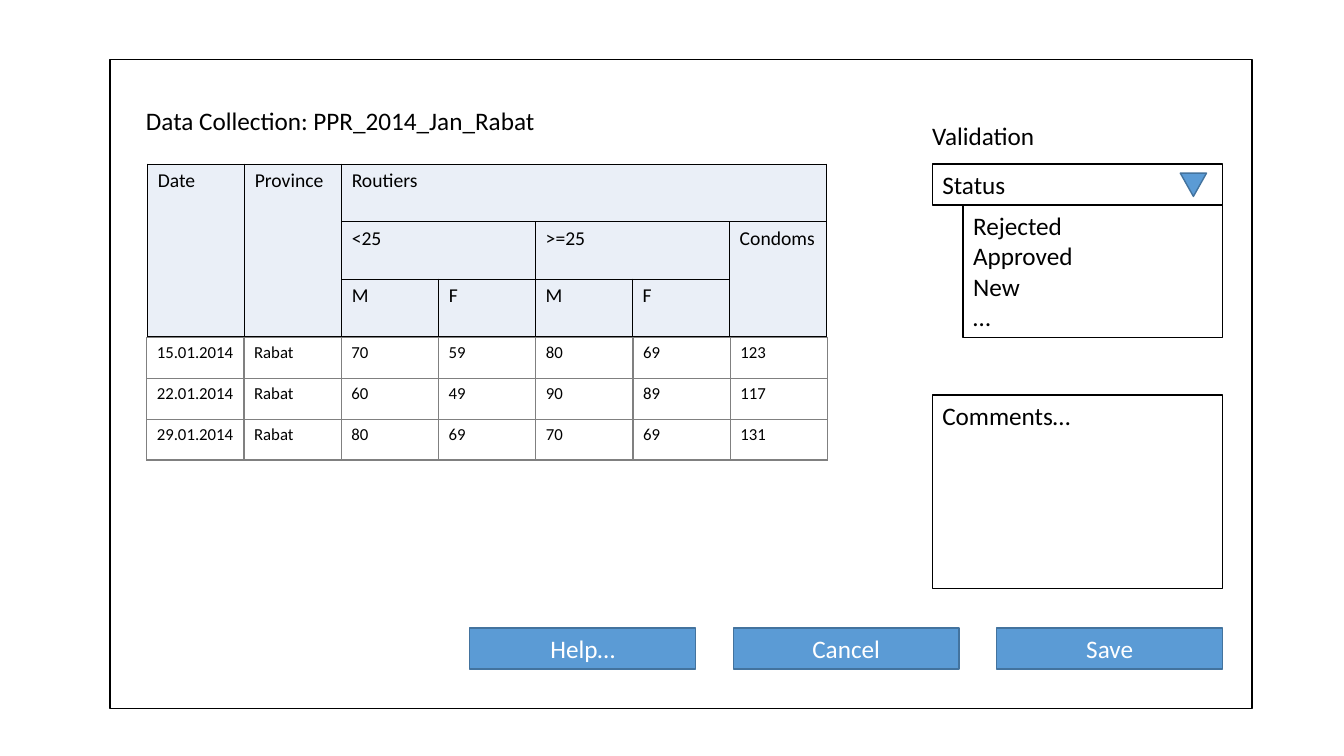
"""Build the data collection form mock-up slide."""
from lxml.etree import SubElement
from pptx import Presentation
from pptx.dml.color import RGBColor
from pptx.enum.shapes import MSO_SHAPE
from pptx.enum.text import MSO_ANCHOR, PP_ALIGN
from pptx.oxml.ns import qn
from pptx.util import Pt

BLACK = RGBColor(0x00, 0x00, 0x00)
WHITE = RGBColor(0xFF, 0xFF, 0xFF)
GREY = RGBColor(0x80, 0x80, 0x80)
BLUE = RGBColor(0x5B, 0x9B, 0xD5)
DARK_BLUE = RGBColor(0x43, 0x73, 0x9E)
PALE_BLUE = RGBColor(0xEA, 0xEF, 0xF7)

CAPTIONS = [
    ("Validation", (658.8, 82.1, 88.6, 28.8)),
    ("Data Collection: PPR_2014_Jan_Rabat", (97.2, 72, 295.2, 28.8)),
]
FIELDS = [
    (["Status"], (666, 117.2, 207.2, 29.2)),
    (["Rejected", "Approved", "New", "…"], (688, 146.8, 185.2, 94.3)),
    (["Comments…"], (666, 282.2, 207.2, 138.2)),
]
BUTTONS = ["Help…", "Cancel", "Save"]
FORM_FRAME = (78.5, 42.5, 815.8, 463.7)
STATUS_ARROW = (843.1, 123.7, 18.7, 16.6)
BUTTON_LEFT, BUTTON_TOP, BUTTON_PITCH = 335.6, 448.6, 188.2
BUTTON_SIZE = (161.3, 29.2)

HEADINGS = [
    ["Date", "Province", "Routiers", "", "", "", ""],
    ["", "", "<25", "", ">=25", "", "Condoms"],
    ["", "", "M", "F", "M", "F", ""],
]
HEADING_SPANS = [
    ((0, 0), (2, 0)), ((0, 1), (2, 1)), ((0, 2), (0, 6)),
    ((1, 2), (1, 3)), ((1, 4), (1, 5)), ((1, 6), (2, 6)),
]
RECORDS = [
    ["15.01.2014", "Rabat", "70", "59", "80", "69", "123"],
    ["22.01.2014", "Rabat", "60", "49", "90", "89", "117"],
    ["29.01.2014", "Rabat", "80", "69", "70", "69", "131"],
]


def points(box):
    return [Pt(value) for value in box]


def write(frame, lines, size=18, color=BLACK, align=PP_ALIGN.LEFT):
    frame.text = "\n".join(lines)
    font_format = {"name": "Calibri", "size": Pt(size)}
    for paragraph in frame.paragraphs:
        paragraph.alignment = align
        for attribute, value in font_format.items():
            setattr(paragraph.font, attribute, value)
        paragraph.font.color.rgb = color


def add_block(slide, box, fill=WHITE, line=BLACK, kind=MSO_SHAPE.RECTANGLE):
    block = slide.shapes.add_shape(kind, *points(box))
    block.shadow.inherit = False
    block.fill.solid()
    block.fill.fore_color.rgb = fill
    block.line.color.rgb = line
    block.line.width = Pt(1)
    block.text_frame.vertical_anchor = MSO_ANCHOR.TOP
    return block


def add_borders(cell, color):
    properties = cell._tc.get_or_add_tcPr()
    for side in ("lnL", "lnR", "lnT", "lnB"):
        border = SubElement(properties, qn(f"a:{side}"), w=str(Pt(1)))
        paint = SubElement(border, qn("a:solidFill"))
        SubElement(paint, qn("a:srgbClr"), val=str(color))


def add_grid(slide, rows, corner, cell_size, size, fill, border, spans=()):
    width, height = cell_size
    box = (*corner, width * len(rows[0]), height * len(rows))
    grid = slide.shapes.add_table(len(rows), len(rows[0]), *points(box)).table
    grid.first_row = grid.horz_banding = False
    for column in grid.columns:
        column.width = Pt(width)
    for row_index, row in enumerate(rows):
        grid.rows[row_index].height = Pt(height)
        for column_index, words in enumerate(row):
            cell = grid.cell(row_index, column_index)
            write(cell.text_frame, [words], size)
            add_borders(cell, border)
            cell.fill.solid()
            cell.fill.fore_color.rgb = fill
    for first, last in spans:
        grid.cell(*first).merge(grid.cell(*last))


def main():
    presentation = Presentation()
    presentation.slide_width, presentation.slide_height = Pt(960), Pt(540)
    slide = presentation.slides.add_slide(presentation.slide_layouts[6])

    add_block(slide, FORM_FRAME)
    for words, box in CAPTIONS:
        caption = slide.shapes.add_textbox(*points(box))
        caption.text_frame.word_wrap = False
        write(caption.text_frame, [words])
    for lines, box in FIELDS:
        write(add_block(slide, box).text_frame, lines)
    arrow = add_block(slide, STATUS_ARROW, BLUE, DARK_BLUE,
                      MSO_SHAPE.ISOSCELES_TRIANGLE)
    arrow.rotation = 180

    add_grid(slide, HEADINGS, (105.5, 117.2), (69.3, 41.1), 14,
             PALE_BLUE, BLACK, HEADING_SPANS)
    for index, words in enumerate(BUTTONS):
        left = BUTTON_LEFT + index * BUTTON_PITCH
        button = add_block(slide, (left, BUTTON_TOP, *BUTTON_SIZE),
                           BLUE, DARK_BLUE)
        write(button.text_frame, [words], color=WHITE, align=PP_ALIGN.CENTER)
    add_grid(slide, RECORDS, (104.8, 241), (69.5, 29.2), 12, WHITE, GREY)

    presentation.save("out.pptx")


if __name__ == "__main__":
    main()
